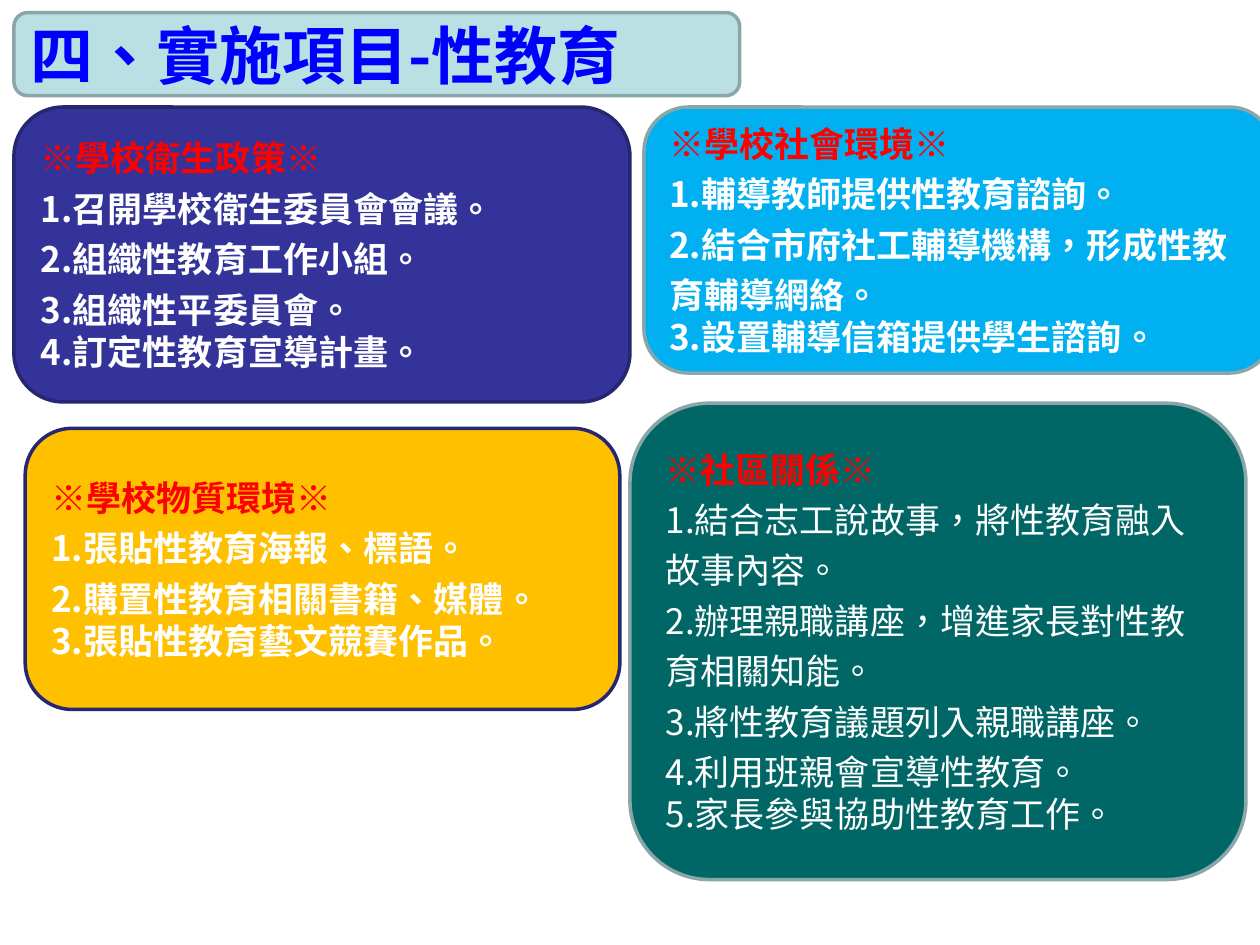
import pptx
import pptx.dml.color
import pptx.enum.shapes
import pptx.enum.text
import pptx.util
from lxml import etree
from pptx.oxml.ns import qn

COLORS = {
    "title": "BBE0E3", "title_text": "0000FF", "heading": "FF0000", "item": "FFFFFF",
    "policy": "333399", "material": "FFC000", "social": "00B0F0", "community": "006666",
    "gray_line": "8AA6A8", "navy_line": "262671",
}
SANS, TRADITIONAL, SERIF, LATIN = (
    "Noto Sans CJK SC", "Noto Sans CJK TC", "Times New Roman", "Arial")

PANELS = [
    {"box": (8, 61.2, 352, 168.5), "fill": "policy", "line": "navy_line",
     "heading": "學校衛生政策", "heading_fonts": (SANS, SANS), "bold": True,
     "items": ["召開學校衛生委員會會議。", "組織性教育工作小組。", "組織性平委員會。",
               "訂定性教育宣導計畫。"]},
    {"box": (14.4, 244.8, 339.8, 160.6), "fill": "material", "line": "navy_line",
     "heading": "學校物質環境", "heading_fonts": (SANS, SANS), "bold": True,
     "items": ["張貼性教育海報、標語。", "購置性教育相關書籍、媒體。", "張貼性教育藝文競賽作品。"]},
    {"box": (368, 61.2, 360, 152), "fill": "social", "line": "gray_line",
     "heading": "學校社會環境", "heading_fonts": (TRADITIONAL, LATIN), "bold": True,
     "items": ["輔導教師提供性教育諮詢。", "結合市府社工輔導機構，形成性教育輔導網絡。",
               "設置輔導信箱提供學生諮詢。"]},
    {"box": (360, 230.4, 352, 272.2), "fill": "community", "line": "gray_line",
     "heading": "社區關係", "heading_fonts": (TRADITIONAL, LATIN), "bold": False,
     "items": ["結合志工說故事，將性教育融入故事內容。", "辦理親職講座，增進家長對性教育相關知能。",
               "將性教育議題列入親職講座。", "利用班親會宣導性教育。", "家長參與協助性教育工作。"]},
]


class SlideBuilder:
    """Draw rounded panels and their text on one slide."""

    def __init__(self, slide):
        self.slide = slide

    def color(self, name):
        return pptx.dml.color.RGBColor.from_string(COLORS[name])

    def panel(self, box, fill, line):
        shape = self.slide.shapes.add_shape(
            pptx.enum.shapes.MSO_SHAPE.ROUNDED_RECTANGLE, *map(pptx.util.Pt, box))
        shape.shadow.inherit = False
        shape.fill.solid()
        shape.fill.fore_color.rgb = self.color(fill)
        shape.line.color.rgb = self.color(line)
        shape.line.width = pptx.util.Pt(2)
        frame = shape.text_frame
        settings = {"word_wrap": True, "vertical_anchor": pptx.enum.text.MSO_ANCHOR.MIDDLE}
        for name, value in settings.items():
            setattr(frame, name, value)
        return frame

    def paragraph(self, frame, pieces, color, size=20, bold=True, spacing=None, first=False):
        paragraph = frame.paragraphs[0] if first else frame.add_paragraph()
        settings = {"alignment": pptx.enum.text.PP_ALIGN.LEFT, "line_spacing": spacing}
        for name, value in settings.items():
            setattr(paragraph, name, value)
        for text, font in pieces:
            run = paragraph.add_run()
            run.text = text
            formats = {"name": font, "size": pptx.util.Pt(size), "bold": bold,
                       "language_id": pptx.enum.lang.MSO_LANGUAGE_ID.TRADITIONAL_CHINESE}
            for name, value in formats.items():
                setattr(run.font, name, value)
            run.font.color.rgb = self.color(color)
            properties = run._r.get_or_add_rPr()
            etree.SubElement(properties, qn("a:ea"), typeface=TRADITIONAL)

    def title(self, text):
        frame = self.panel((8, 7.2, 414.7, 47.5), "title", "gray_line")
        self.paragraph(frame, [(text, SANS)], "title_text", size=36, first=True)

    def topic(self, box, fill, line, heading, heading_fonts, bold, items):
        frame = self.panel(box, fill, line)
        mark_font, heading_font = heading_fonts
        pieces = [("※", mark_font), (heading, heading_font), ("※", mark_font)]
        self.paragraph(frame, pieces, "heading", first=True)
        for number, item in enumerate(items, 1):
            last = number == len(items)
            pieces = [(f"{number}.", SANS), (item, LATIN if last else SERIF)]
            self.paragraph(frame, pieces, "item", bold=bold, spacing=None if last else 1.2)


def main():
    presentation = pptx.Presentation()
    presentation.slide_width = pptx.util.Pt(720)
    presentation.slide_height = pptx.util.Pt(540)
    builder = SlideBuilder(presentation.slides.add_slide(presentation.slide_layouts[6]))
    builder.title("四、實施項目-性教育")
    for panel in PANELS:
        builder.topic(**panel)
    presentation.save("out.pptx")


if __name__ == "__main__":
    main()
